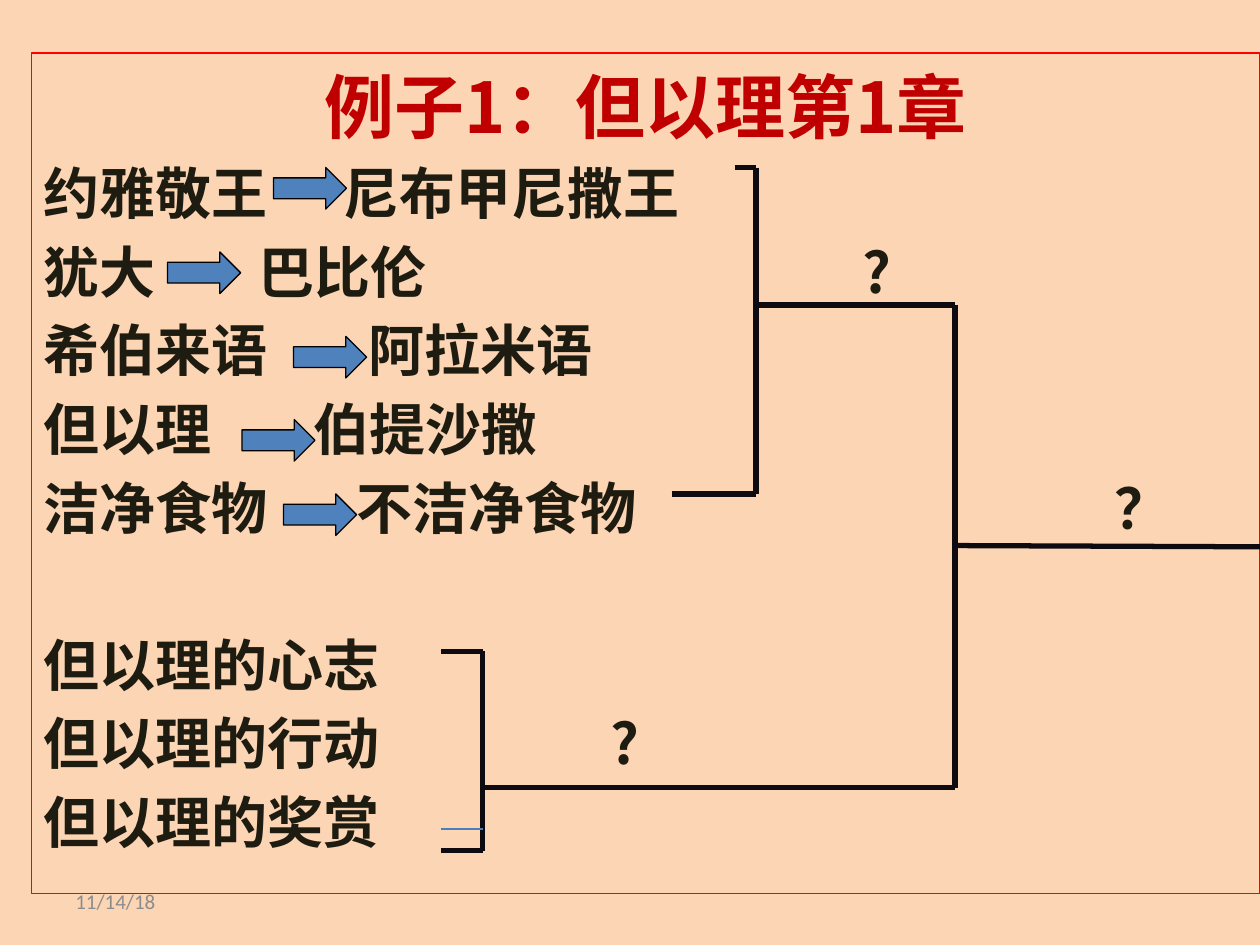
from lxml import etree
from pptx import Presentation
from pptx.dml.color import RGBColor
from pptx.enum.shapes import MSO_CONNECTOR, MSO_SHAPE
from pptx.enum.text import MSO_ANCHOR, PP_ALIGN
from pptx.oxml.ns import qn
from pptx.util import Inches, Pt

STRAIGHT = MSO_CONNECTOR.STRAIGHT
RECT, ARROW = MSO_SHAPE.RECTANGLE, MSO_SHAPE.RIGHT_ARROW
TOP, MIDDLE = MSO_ANCHOR.TOP, MSO_ANCHOR.MIDDLE
LEFT, CENTER = PP_ALIGN.LEFT, PP_ALIGN.CENTER

CJK = "Noto Sans CJK SC"
INK, BRACKET = "1E1C11", "0D0A10"
ROW_PITCH = 44.9

TITLE = {"size": Pt(40), "bold": True, "name": CJK, "color": "C00000"}
BODY = {"size": Pt(32), "bold": True, "name": CJK, "color": INK}
DATE = {"size": Pt(12), "bold": False, "name": "Calibri", "color": "8C8C8C"}

# Text, tab stops in inches, space before in points
ROWS = [
    ("约雅敬王\t尼布甲尼撒王", [2.38], 0),
    ("犹大\t巴比伦\t?", [1.7, 6.5], 0),
    ("希伯来语\t阿拉米语", [2.58], 0),
    ("但以理\t伯提沙撒", [2.14], 0),
    ("洁净食物\t不洁净食物\t？", [2.48, 8.5], 0),
    ("但以理的心志", [], ROW_PITCH),
    ("但以理的行动\t?", [4.5], 0),
    ("但以理的奖赏", [], 0),
]

# Left and top of the arrow in each contrast row
ARROWS = [(2.17, 1.33), (1.33, 2), (2.33, 2.67), (1.92, 3.33), (2.25, 3.92)]

# Start x, start y, end x, end y
BRACKET_LINES = [
    # Upper group
    (5.83, 1.33, 6, 1.33), (6, 1.33, 6, 3.92), (5.33, 3.92, 6, 3.92),
    (6, 2.42, 7.58, 2.42),
    # Lower group
    (3.5, 5.17, 3.83, 5.17), (3.83, 5.17, 3.83, 6.75),
    (3.5, 6.75, 3.83, 6.75), (3.83, 6.25, 7.58, 6.25),
    # Both groups together
    (7.58, 2.42, 7.58, 6.25), (7.58, 4.33, 10, 4.34),
]


def rgb(color):
    return RGBColor.from_string(color)


def set_line(line, color, width):
    line.color.rgb = rgb(color)
    line.width = Pt(width)


def add_text(p, text, style, align=LEFT):
    p.alignment = align
    r = p.add_run()
    r.text = text
    for key, value in style.items():
        if key == "color":
            r.font.color.rgb = rgb(value)
        else:
            setattr(r.font, key, value)
    ea = etree.SubElement(r.font._element, qn("a:ea"))
    ea.set("typeface", style["name"])


def add_tabs(p, stops):
    tabs = etree.SubElement(p._p.get_or_add_pPr(), qn("a:tabLst"))
    for stop in stops:
        tab = etree.SubElement(tabs, qn("a:tab"))
        tab.set("pos", str(Inches(stop)))
        tab.set("algn", "l")


def add_line(s, x1, y1, x2, y2, color=BRACKET, width=3):
    line = s.shapes.add_connector(
        STRAIGHT, Inches(x1), Inches(y1), Inches(x2), Inches(y2))
    set_line(line.line, color, width)
    etree.SubElement(line._element.spPr, qn("a:effectLst"))


def add_arrow(s, x, y):
    sp = s.shapes.add_shape(
        ARROW, Inches(x), Inches(y), Inches(0.58), Inches(0.33))
    sp.shadow.inherit = False
    sp.fill.solid()
    sp.fill.fore_color.rgb = rgb("4F81BD")
    set_line(sp.line, "000000", 0.75)


def add_outline(s):
    sp = s.shapes.add_shape(
        RECT, Inches(0.25), Inches(0.42), Inches(9.75), Inches(6.67))
    sp.shadow.inherit = False
    sp.fill.background()
    set_line(sp.line, "FF0000", 0.75)
    tf = sp.text_frame
    tf.word_wrap = True
    tf.vertical_anchor = TOP
    p = tf.paragraphs[0]
    p.line_spacing = Pt(50.5)
    add_text(p, "例子1：但以理第1章", TITLE, CENTER)
    for text, stops, gap in ROWS:
        p = tf.add_paragraph()
        p.line_spacing = Pt(ROW_PITCH)
        p.space_before = Pt(gap)
        if stops:
            add_tabs(p, stops)
        add_text(p, text, BODY)


def add_date(s):
    box = s.shapes.add_textbox(
        Inches(0.5), Inches(6.95), Inches(2.33), Inches(0.4))
    tf = box.text_frame
    tf.word_wrap = True
    tf.vertical_anchor = MIDDLE
    add_text(tf.paragraphs[0], "11/14/18", DATE)


def main():
    prs = Presentation()
    prs.slide_width, prs.slide_height = Inches(10), Inches(7.5)
    s = prs.slides.add_slide(prs.slide_layouts[6])
    s.background.fill.solid()
    s.background.fill.fore_color.rgb = rgb("FCD5B5")

    # Title and rows
    add_outline(s)
    add_date(s)

    # Brackets, with a thin rule beside the last row
    for ends in BRACKET_LINES:
        add_line(s, *ends)
    add_line(s, 3.5, 6.58, 3.83, 6.58, "4B7EBC", 0.75)

    # Contrast arrows
    for x, y in ARROWS:
        add_arrow(s, x, y)

    prs.save("out.pptx")


if __name__ == "__main__":
    main()
